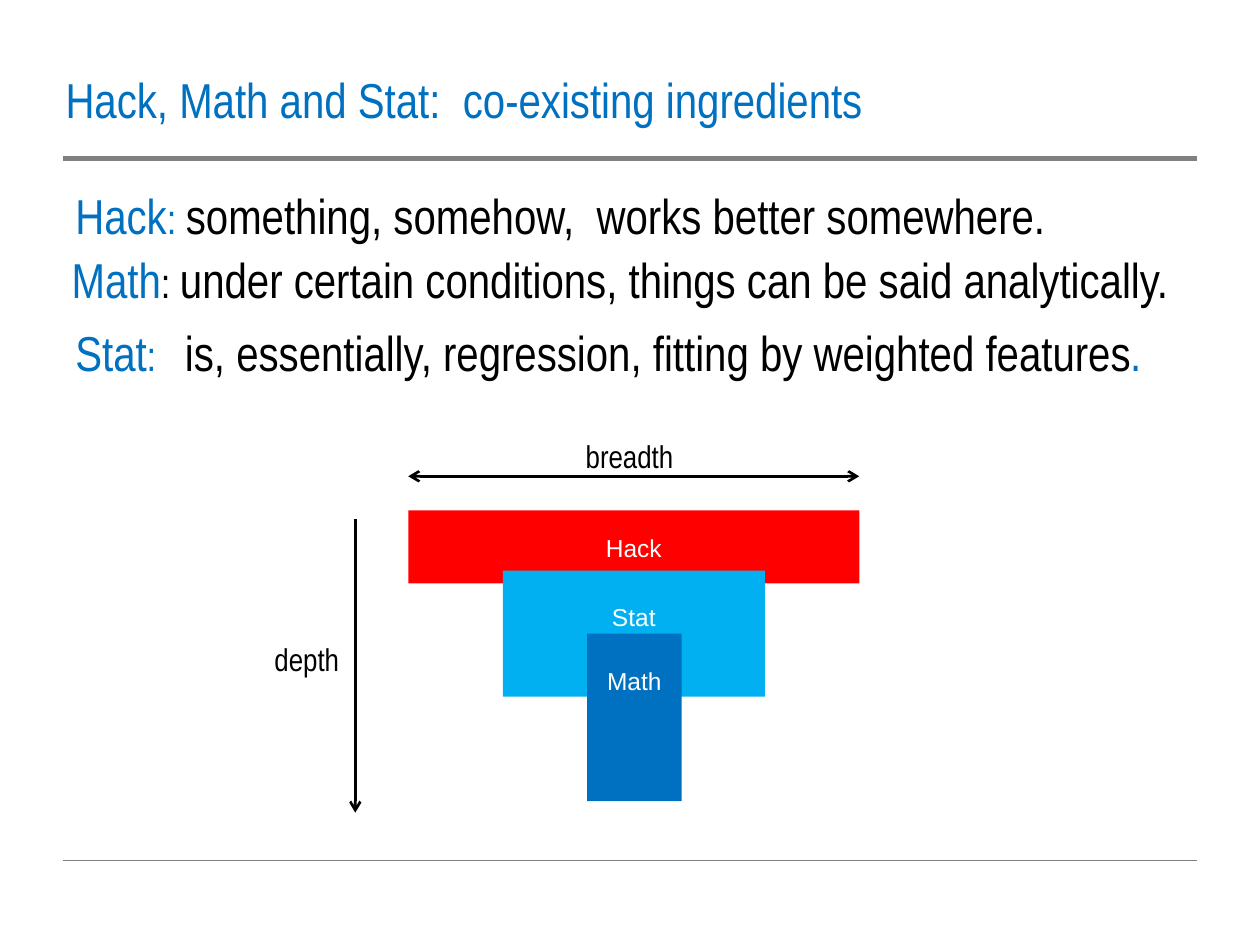
from dataclasses import dataclass

from lxml.etree import SubElement
from pptx import Presentation
from pptx.dml.color import RGBColor
from pptx.enum.shapes import MSO_CONNECTOR, MSO_SHAPE
from pptx.enum.text import MSO_ANCHOR, MSO_AUTO_SIZE, PP_ALIGN
from pptx.oxml.ns import qn
from pptx.util import Pt

EMU_PER_PX = 9144  # 100 px to the inch


def px(length):
    return length * EMU_PER_PX


@dataclass(frozen=True)
class Theme:
    narrow: str = "Arial Narrow"
    regular: str = "Arial"
    blue: str = "0070C0"
    sky: str = "00B0F0"
    red: str = "FF0000"
    gray: str = "808080"
    black: str = "000000"
    white: str = "FFFFFF"
    heading: int = 28
    colon: int = 24
    axis: int = 18
    block: int = 14


class SlideBuilder:
    def __init__(self, slide, theme):
        self.slide = slide
        self.theme = theme

    def format_run(self, run, size, color, font=None):
        run.font.name = font or self.theme.narrow
        run.font.size = Pt(size)
        run.font.color.rgb = RGBColor.from_string(color)

    def title(self, text, left, top, width, height):
        shape = self.slide.shapes.title
        shape.left, shape.top = px(left), px(top)
        shape.width, shape.height = px(width), px(height)
        frame = shape.text_frame
        frame.text = text
        frame.auto_size = MSO_AUTO_SIZE.NONE
        frame.word_wrap = False
        frame.vertical_anchor = MSO_ANCHOR.TOP
        paragraph = frame.paragraphs[0]
        paragraph.alignment = PP_ALIGN.LEFT
        self.format_run(paragraph.runs[0], self.theme.heading, self.theme.blue)

    def text(self, parts, left, top, width, height, wrap=False, tab=None):
        """Add one line of text; parts are (text, size, color)."""
        box = self.slide.shapes.add_textbox(px(left), px(top), px(width), px(height))
        frame = box.text_frame
        frame.word_wrap = wrap
        paragraph = frame.paragraphs[0]
        for text, size, color in parts:
            run = paragraph.add_run()
            run.text = text
            self.format_run(run, size, color)
        if tab:
            properties = paragraph._p.get_or_add_pPr()
            stops = SubElement(properties, qn("a:tabLst"))
            SubElement(stops, qn("a:tab"), pos=str(px(tab)), algn="l")

    def block(self, text, color, left, top, width, height, inset):
        """Add a filled rectangle with its label inset from the top."""
        shape = self.slide.shapes.add_shape(
            MSO_SHAPE.RECTANGLE, px(left), px(top), px(width), px(height))
        shape.shadow.inherit = False
        shape.fill.solid()
        shape.fill.fore_color.rgb = RGBColor.from_string(color)
        shape.line.fill.background()
        frame = shape.text_frame
        frame.text = text
        frame.vertical_anchor = MSO_ANCHOR.TOP
        frame.margin_top = px(inset)
        paragraph = frame.paragraphs[0]
        paragraph.alignment = PP_ALIGN.CENTER
        self.format_run(paragraph.runs[0], self.theme.block, self.theme.white,
                        self.theme.regular)

    def line(self, start, end, color, weight, arrows=()):
        """Add a straight line; arrows may hold headEnd and tailEnd."""
        connector = self.slide.shapes.add_connector(
            MSO_CONNECTOR.STRAIGHT, *map(px, start + end))
        connector.line.color.rgb = RGBColor.from_string(color)
        connector.line.width = Pt(weight)
        outline = connector.line._get_or_add_ln()
        for arrow in arrows:
            SubElement(outline, qn(f"a:{arrow}"), type="arrow")
        SubElement(connector._element.spPr, qn("a:effectLst"))


def main():
    theme = Theme()
    presentation = Presentation()
    presentation.slide_width, presentation.slide_height = px(1000), px(750)
    slide = presentation.slides.add_slide(presentation.slide_layouts[5])
    builder = SlideBuilder(slide, theme)

    # Title and rules
    builder.title("Hack, Math and Stat:  co-existing ingredients", 42, 50, 659, 57)
    builder.line((50, 126), (950, 126), theme.gray, 3)
    builder.line((50, 683), (950, 683), theme.gray, 0.75)

    # Definitions
    size = theme.heading
    builder.text([("Hack", size, theme.blue), (": ", theme.colon, theme.blue),
                  ("something, somehow,  works better somewhere.", size, theme.black)],
                 50, 142, 816, 57)
    builder.text([("Math", size, theme.blue), (": ", theme.colon, theme.black),
                  ("under certain conditions, things can be said analytically.",
                   size, theme.black)],
                 47, 193, 899, 57)
    builder.text([("Stat", size, theme.blue), (":\t", theme.colon, theme.blue),
                  ("is, essentially, regression, fitting by weighted features",
                   size, theme.black), (".", size, theme.blue)],
                 50, 251, 900, 57, wrap=True, tab=87)

    # Stacked blocks
    builder.block("Hack", theme.red, 324, 405, 358, 58, inset=18)
    builder.block("Stat", theme.sky, 399, 453, 208, 100, inset=25)
    builder.block("Math", theme.blue, 466, 503, 75, 133, inset=26)

    # Depth and breadth axes
    builder.line((282, 412), (282, 645), theme.black, 1.5, ["tailEnd"])
    builder.line((324, 378), (682, 378), theme.black, 1.5, ["headEnd", "tailEnd"])
    builder.text([("breadth", theme.axis, theme.black)], 455, 342, 91, 40)
    builder.text([("depth", theme.axis, theme.black)], 208, 503, 72, 40)

    presentation.save("out.pptx")


if __name__ == "__main__":
    main()
